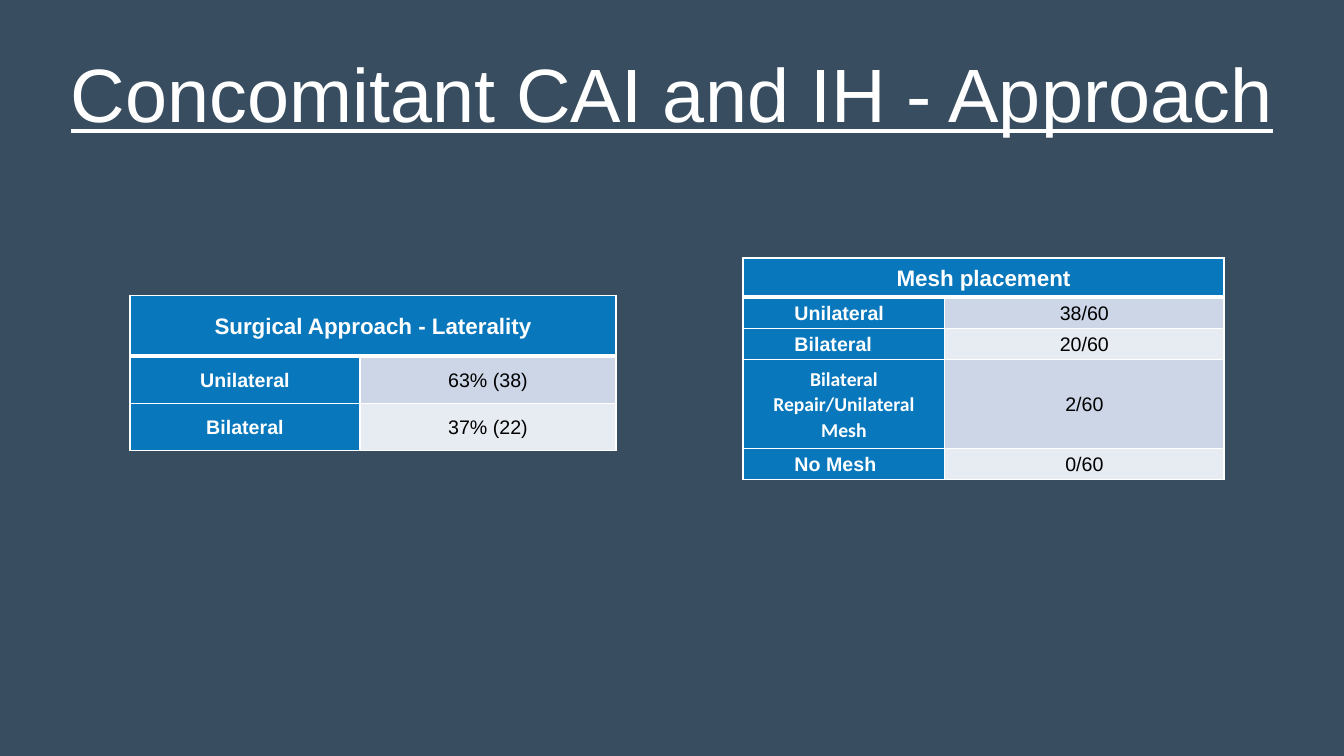
from dataclasses import dataclass

from lxml import etree
from pptx import Presentation
from pptx import util as u
from pptx.dml import color
from pptx.enum import text
from pptx.oxml import ns

BACKGROUND, WHITE, BLACK, BLUE = "384D60", "FFFFFF", "000000", "0877BC"
BANDS = ("CCD6E7", "E7ECF3")
SIDE_PADDING = 0.07


@dataclass(frozen=True)
class Row:
    label: str
    value: str
    height: float
    indent: float | None = None  # None centres the label
    font: str = "Arial"


@dataclass(frozen=True)
class ResultTable:
    title: str
    left: float
    top: float
    columns: tuple[float, float]
    header_height: float
    rows: tuple[Row, ...]


TABLES = (
    ResultTable("Surgical Approach - Laterality", 1.29, 2.93, (2.28, 2.54), 0.6, (
        Row("Unilateral", "63% (38)", 0.47),
        Row("Bilateral", "37% (22)", 0.47),
    )),
    ResultTable("Mesh placement", 7.37, 2.56, (2, 2.77), 0.39, (
        Row("Unilateral", "38/60", 0.31, indent=0.44),
        Row("Bilateral", "20/60", 0.31, indent=0.44),
        Row("Bilateral Repair/Unilateral Mesh", "2/60", 0.88, font="Calibri"),
        Row("No Mesh", "0/60", 0.31, indent=0.44),
    )),
)


def rgb(value: str) -> color.RGBColor:
    return color.RGBColor.from_string(value)


def write(tf, content: str, size: float, ink: str, spacing: float,
          bold: bool = False, font: str = "Arial"):
    """Fill a text frame with one centred paragraph and return it."""
    tf.text = content
    tf.word_wrap = True
    p = tf.paragraphs[0]
    p.alignment = text.PP_ALIGN.CENTER
    p.line_spacing = spacing
    f = p.runs[0].font
    f.name, f.size, f.bold = font, u.Pt(size), bold
    f.color.rgb = rgb(ink)
    return p


def set_borders(cell, **widths: float) -> None:
    """Draw white borders of the given point widths, keyed L, R, T and B."""
    tc_pr = cell._tc.get_or_add_tcPr()
    for i, (side, width) in enumerate(widths.items()):
        ln = etree.Element(ns.qn(f"a:ln{side}"), w=str(u.Pt(width)))
        fill = etree.SubElement(ln, ns.qn("a:solidFill"))
        etree.SubElement(fill, ns.qn("a:srgbClr"), val=WHITE)
        tc_pr.insert(i, ln)


def style_cell(cell, fill: str, top: float = 1, bottom: float = 1) -> None:
    cell.fill.solid()
    cell.fill.fore_color.rgb = rgb(fill)
    cell.vertical_anchor = text.MSO_ANCHOR.MIDDLE
    cell.margin_left = cell.margin_right = u.Inches(SIDE_PADDING)
    cell.margin_top = cell.margin_bottom = 0
    set_borders(cell, L=1, R=1, T=top, B=bottom)


def add_result_table(s, spec_table: ResultTable) -> None:
    heights = [spec_table.header_height] + [row.height for row in spec_table.rows]
    frame = s.shapes.add_table(
        len(heights), 2, u.Inches(spec_table.left), u.Inches(spec_table.top),
        u.Inches(sum(spec_table.columns)), u.Inches(sum(heights)))
    table = frame.table
    for column, width in zip(table.columns, spec_table.columns):
        column.width = u.Inches(width)
    for table_row, height in zip(table.rows, heights):
        table_row.height = u.Inches(height)

    header = table.cell(0, 0)
    header.merge(table.cell(0, 1))
    for cell in table.rows[0].cells:
        style_cell(cell, BLUE, bottom=3)
    write(header.text_frame, spec_table.title, 16, WHITE, 1.07, bold=True)

    for i, row in enumerate(spec_table.rows):
        label, value = table.rows[i + 1].cells
        top = 3 if i == 0 else 1
        style_cell(label, BLUE, top=top)
        style_cell(value, BANDS[i % 2], top=top)
        p = write(label.text_frame, row.label, 14, WHITE, 1.07, bold=True, font=row.font)
        if row.indent is not None:
            p.alignment = text.PP_ALIGN.LEFT
            label.margin_left = u.Inches(SIDE_PADDING + row.indent)
        write(value.text_frame, row.value, 14, BLACK, 1.07)


def add_title(s, content: str) -> None:
    sp = s.shapes.add_textbox(0, u.Inches(0.25), u.Inches(13.33), u.Inches(1.45))
    tf = sp.text_frame
    tf.vertical_anchor = text.MSO_ANCHOR.MIDDLE
    p = write(tf, content, 54, WHITE, 0.9)
    p.runs[0].font.underline = True


def main() -> None:
    prs = Presentation()
    prs.slide_width, prs.slide_height = u.Inches(13.33), u.Inches(7.5)
    s = prs.slides.add_slide(prs.slide_layouts[6])
    s.background.fill.solid()
    s.background.fill.fore_color.rgb = rgb(BACKGROUND)
    add_title(s, "Concomitant CAI and IH - Approach")
    for result_table in TABLES:
        add_result_table(s, result_table)
    prs.save("out.pptx")


if __name__ == "__main__":
    main()
